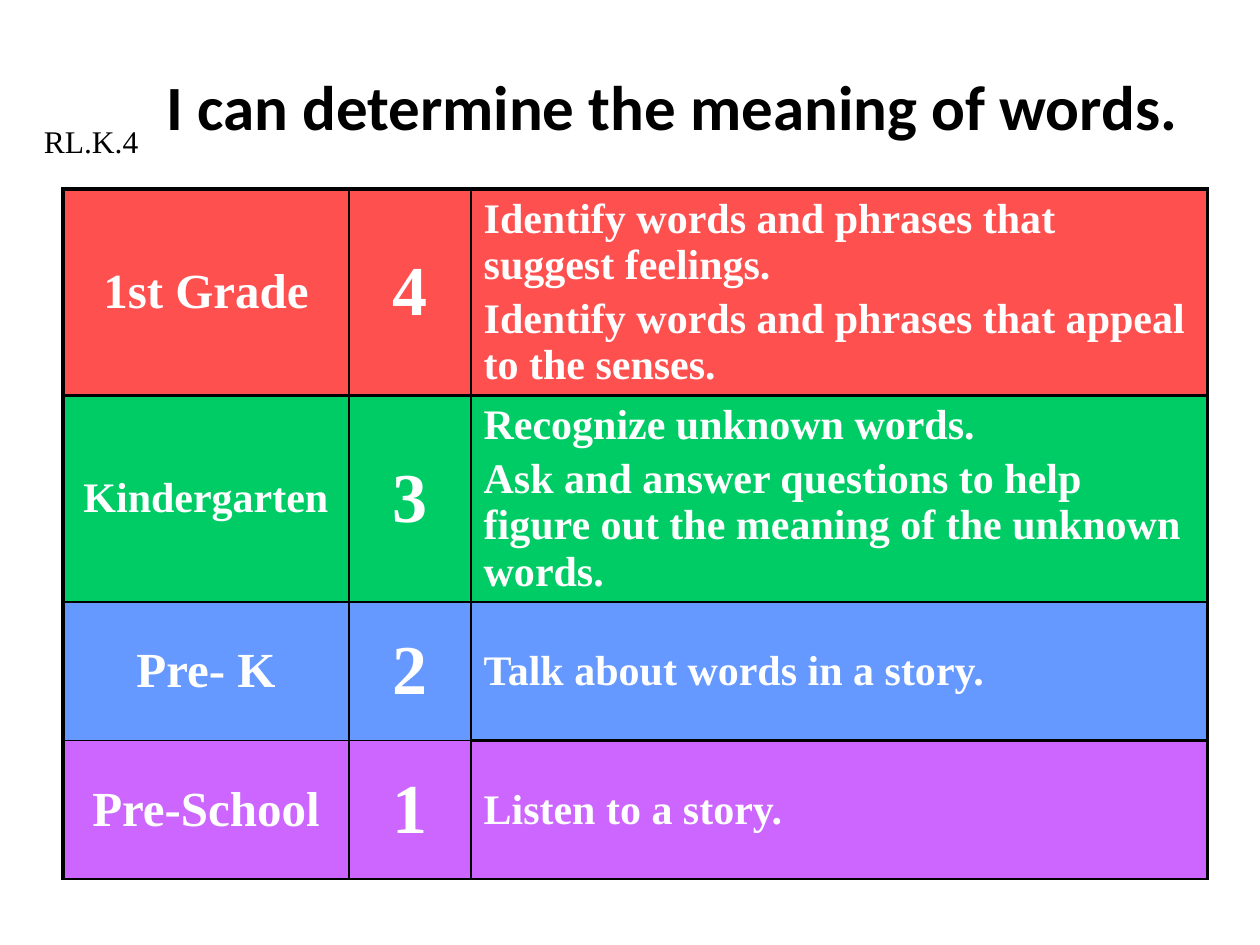
from dataclasses import dataclass

import pptx
import pptx.dml.color
import pptx.enum.text
import pptx.oxml
import pptx.oxml.ns
import pptx.util
from pptx.util import Pt

SERIF = "Times New Roman"
LEFT = pptx.enum.text.PP_ALIGN.LEFT
CENTER = pptx.enum.text.PP_ALIGN.CENTER
MIDDLE = pptx.enum.text.MSO_ANCHOR.MIDDLE
COLUMN_WIDTHS = (163.4, 69.8, 420.8)
OUTER, INNER = 2.25, 1


@dataclass
class Level:
    grade: str
    score: str
    goals: tuple[str, ...]
    fill: str
    height: float
    grade_size: float = 28


LEVELS = (
    Level("1st Grade", "4",
          ("Identify words and phrases that suggest feelings.",
           "Identify words and phrases that appeal to the senses."),
          "FF5050", 118),
    Level("Kindergarten", "3",
          ("Recognize unknown words.",
           "Ask and answer questions to help figure out the meaning of the unknown words."),
          "00CC66", 118, 24),
    Level("Pre- K", "2", ("Talk about words in a story.",), "6699FF", 79.2),
    Level("Pre-School", "1", ("Listen to a story.",), "CC66FF", 79.2),
)


def color(value: str) -> pptx.dml.color.RGBColor:
    return pptx.dml.color.RGBColor.from_string(value)


def format_paragraph(paragraph, size: float, ink: str, name: str = SERIF,
                     bold: bool = False, align=LEFT) -> None:
    paragraph.alignment = align
    font = paragraph.font
    font.name, font.size, font.bold = name, Pt(size), bold
    font.color.rgb = color(ink)


def set_borders(cell, widths: dict[str, float]) -> None:
    """Draw black cell borders; lines must precede the fill in the XML."""
    properties = cell._tc.get_or_add_tcPr()
    for position, (side, width) in enumerate(widths.items()):
        line = pptx.oxml.parse_xml(
            f'<a:{side} {pptx.oxml.ns.nsdecls("a")} w="{int(Pt(width))}">'
            '<a:solidFill><a:srgbClr val="000000"/></a:solidFill>'
            f'</a:{side}>')
        properties.insert(position, line)


def fill_cell(cell, lines: tuple[str, ...], size: float, fill: str, align) -> None:
    cell.fill.solid()
    cell.fill.fore_color.rgb = color(fill)
    cell.vertical_anchor = MIDDLE
    frame = cell.text_frame
    frame.text = "\n".join(lines)
    for index, paragraph in enumerate(frame.paragraphs):
        format_paragraph(paragraph, size, "FFFFFF", bold=True, align=align)
        if index:
            paragraph.space_before = Pt(4)


def row_line(boundary: int, column: int) -> float:
    """Width of the horizontal line above row number `boundary`."""
    if boundary == 0:
        return OUTER
    if boundary == 1:
        return 1.5
    return 1.5 if column == 2 or boundary == len(LEVELS) else INNER


def add_levels(slide) -> None:
    height = sum(level.height for level in LEVELS)
    table = slide.shapes.add_table(
        len(LEVELS), len(COLUMN_WIDTHS), Pt(36), Pt(108),
        Pt(sum(COLUMN_WIDTHS)), Pt(height)).table
    table.first_row = table.horz_banding = False
    for column, width in zip(table.columns, COLUMN_WIDTHS):
        column.width = Pt(width)
    last = len(COLUMN_WIDTHS) - 1
    for row, level in enumerate(LEVELS):
        table.rows[row].height = Pt(level.height)
        contents = (((level.grade,), level.grade_size, CENTER),
                    ((level.score,), 40, CENTER),
                    (level.goals, 24, LEFT))
        for column, (lines, size, align) in enumerate(contents):
            cell = table.cell(row, column)
            fill_cell(cell, lines, size, level.fill, align)
            set_borders(cell, {
                "lnL": OUTER if column == 0 else INNER,
                "lnR": OUTER if column == last else INNER,
                "lnT": row_line(row, column),
                "lnB": row_line(row + 1, column),
            })


def main() -> None:
    presentation = pptx.Presentation()
    presentation.slide_width, presentation.slide_height = Pt(720), Pt(540)
    slide = presentation.slides.add_slide(presentation.slide_layouts[5])

    # Title
    title = slide.shapes.title
    title.left, title.top, title.width, title.height = Pt(78), Pt(24), Pt(612), Pt(72)
    title.text_frame.text = "I can determine the meaning of words."
    title.text_frame.vertical_anchor = MIDDLE
    format_paragraph(title.text_frame.paragraphs[0], 36, "000000", "Calibri", True, CENTER)

    # Learning scale
    add_levels(slide)

    # Standard code
    code = slide.shapes.add_textbox(Pt(18), Pt(66), Pt(102), Pt(29))
    code.text_frame.word_wrap = True
    code.text_frame.text = "RL.K.4"
    format_paragraph(code.text_frame.paragraphs[0], 18, "000000")

    presentation.save("out.pptx")


if __name__ == "__main__":
    main()
